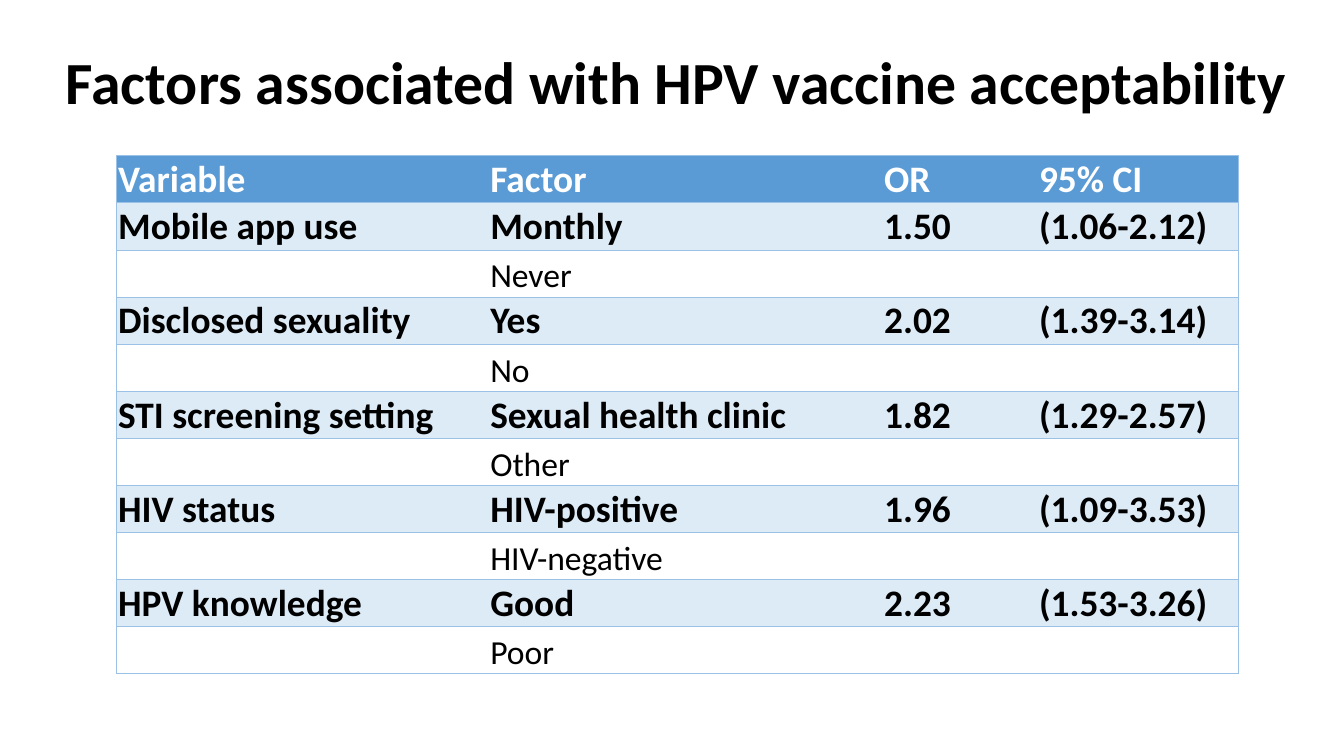
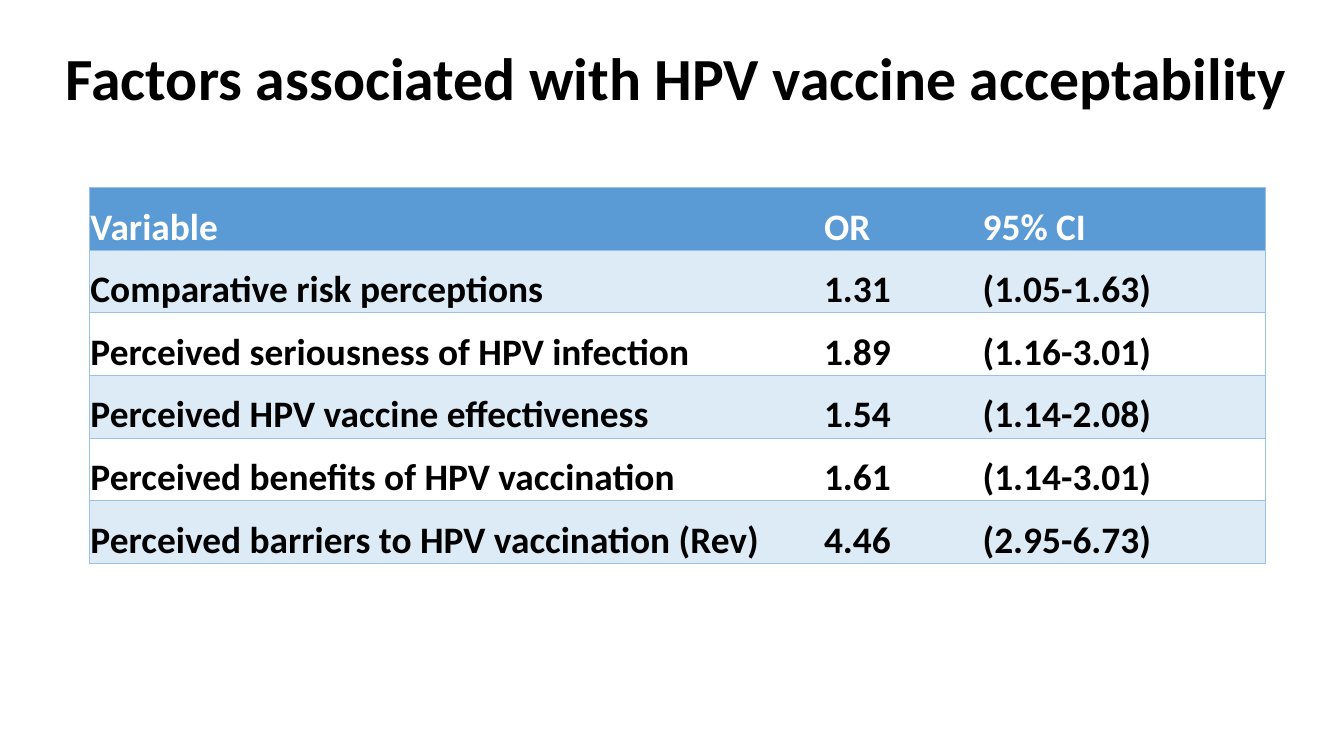
import pptx
import pptx.dml.color
import pptx.enum.text
import pptx.util
from lxml import etree
from pptx.oxml import ns

Pt = pptx.util.Pt
RGBColor = pptx.dml.color.RGBColor

BLACK = RGBColor(0x00, 0x00, 0x00)
WHITE = RGBColor(0xFF, 0xFF, 0xFF)
HEADER_BLUE = RGBColor(0x5B, 0x9B, 0xD5)
BAND_BLUE = RGBColor(0xDD, 0xEB, 0xF7)
BORDER_BLUE = RGBColor(0x9B, 0xC2, 0xE6)
FONT = "Calibri"
HEADING = "Factors associated with HPV vaccine acceptability"

SLIDES = [
    {
        "heading_top": 9.4,
        "left": 62.6, "top": 83.5, "row_height": 25.2,
        "widths": [199.4, 211, 83, 107.4],
        "rows": [
            ["Variable", "Factor", "OR", "95% CI"],
            ["Mobile app use", "Monthly", "1.50", "(1.06-2.12)"],
            ["", "Never", "", ""],
            ["Disclosed sexuality", "Yes", "2.02", "(1.39-3.14)"],
            ["", "No", "", ""],
            ["STI screening setting", "Sexual health clinic", "1.82", "(1.29-2.57)"],
            ["", "Other", "", ""],
            ["HIV status", "HIV-positive", "1.96", "(1.09-3.53)"],
            ["", "HIV-negative", "", ""],
            ["HPV knowledge", "Good", "2.23", "(1.53-3.26)"],
            ["", "Poor", "", ""],
        ],
    },
    {
        "heading_top": 7.2,
        "left": 47.8, "top": 100.5, "row_height": 33.55,
        "widths": [393, 85, 152],
        "rows": [
            ["Variable", "OR", "95% CI"],
            ["Comparative risk perceptions", "1.31", "(1.05-1.63)"],
            ["Perceived seriousness of HPV infection", "1.89", "(1.16-3.01)"],
            ["Perceived HPV vaccine effectiveness", "1.54", "(1.14-2.08)"],
            ["Perceived benefits of HPV vaccination", "1.61", "(1.14-3.01)"],
            ["Perceived barriers to HPV vaccination (Rev)", "4.46", "(2.95-6.73)"],
        ],
    },
]


def set_borders(cell, visible_sides):
    """Rule the given sides (letters of LRTB) and clear the others."""
    properties = cell._tc.get_or_add_tcPr()
    for position, side in enumerate("LRTB"):
        line = etree.Element(ns.qn(f"a:ln{side}"), w=str(Pt(0.5)))
        if side in visible_sides:
            fill = etree.SubElement(line, ns.qn("a:solidFill"))
            etree.SubElement(fill, ns.qn("a:srgbClr"), val=str(BORDER_BLUE))
        else:
            etree.SubElement(line, ns.qn("a:noFill"))
        properties.insert(position, line)


def write(paragraph, text, size, color, bold):
    run = paragraph.add_run()
    run.text = text
    for attribute, value in {"name": FONT, "size": Pt(size), "bold": bold}.items():
        setattr(run.font, attribute, value)
    run.font.color.rgb = color


deck = pptx.Presentation()
deck.slide_width = Pt(720)
deck.slide_height = Pt(405)

for content in SLIDES:
    slide = deck.slides.add_slide(deck.slide_layouts[6])

    heading = slide.shapes.add_textbox(
        Pt(25.2), Pt(content["heading_top"]), Pt(674.6), Pt(67.7)).text_frame
    heading.word_wrap = True
    heading.vertical_anchor = pptx.enum.text.MSO_ANCHOR.MIDDLE
    heading.paragraphs[0].alignment = pptx.enum.text.PP_ALIGN.CENTER
    write(heading.paragraphs[0], HEADING, 32, BLACK, True)

    rows, widths = content["rows"], content["widths"]
    factors = slide.shapes.add_table(
        len(rows), len(widths), Pt(content["left"]), Pt(content["top"]),
        Pt(sum(widths)), Pt(content["row_height"] * len(rows))).table
    factors.horz_banding = False
    factors.first_row = False
    for column, width in zip(factors.columns, widths):
        column.width = Pt(width)

    for row_index, values in enumerate(rows):
        factors.rows[row_index].height = Pt(content["row_height"])
        is_header = row_index == 0
        is_reference = values[0] == ""
        for column_index, value in enumerate(values):
            cell = factors.cell(row_index, column_index)
            cell.vertical_anchor = pptx.enum.text.MSO_ANCHOR.BOTTOM
            for side, margin in {"left": 0.7, "right": 0.7, "top": 0.7, "bottom": 0}.items():
                setattr(cell, f"margin_{side}", Pt(margin))
            if is_header or row_index % 2:
                cell.fill.solid()
                cell.fill.fore_color.rgb = HEADER_BLUE if is_header else BAND_BLUE
            else:
                cell.fill.background()
            sides = "TB"
            if column_index == 0:
                sides += "L"
            if column_index == len(widths) - 1:
                sides += "R"
            set_borders(cell, sides)
            if value:
                write(cell.text_frame.paragraphs[0], value, 18 if is_reference else 20,
                      WHITE if is_header else BLACK, not is_reference)

deck.save("out.pptx")
